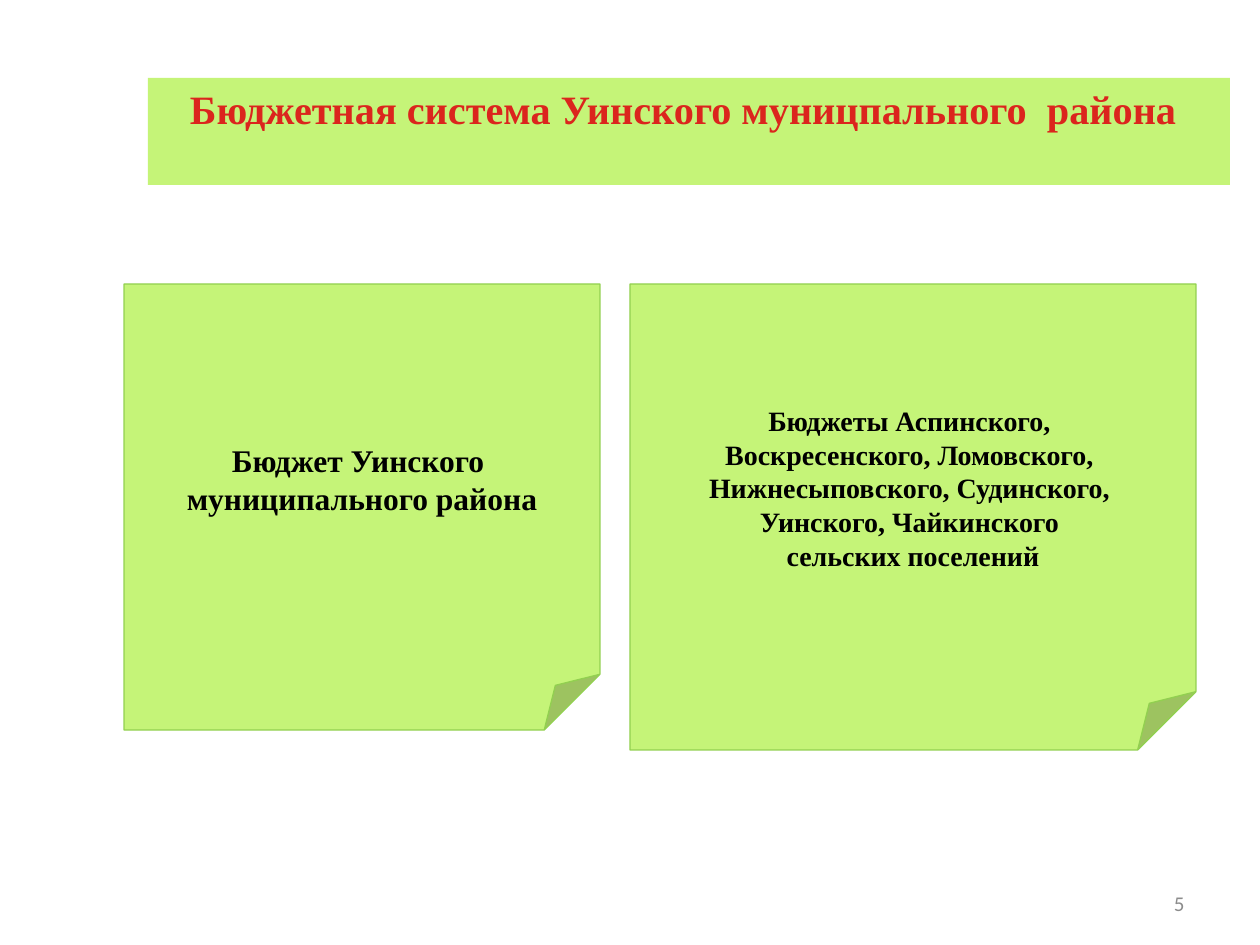
from lxml import etree
from pptx import Presentation
from pptx.dml.color import RGBColor
from pptx.enum.shapes import MSO_SHAPE
from pptx.enum.text import MSO_ANCHOR, PP_ALIGN
from pptx.oxml.ns import qn
from pptx.util import Pt

PX = 914400 // 126
RECT = MSO_SHAPE.RECTANGLE
NOTE = MSO_SHAPE.FOLDED_CORNER
TOP, MID = MSO_ANCHOR.TOP, MSO_ANCHOR.MIDDLE
CENTER, RIGHT = PP_ALIGN.CENTER, PP_ALIGN.RIGHT
SERIF, SANS = "Times New Roman", "Calibri"
COLORS = {"lime": "C5F478", "edge": "92D050", "red": "DB251D",
          "black": "000000", "gray": "8C8C8C"}


def color(name):
    return RGBColor.from_string(COLORS[name])


def scale(box):
    return [side * PX for side in box]


def write(shape, lines, size, tone, font=SERIF, bold=True,
          align=CENTER, anchor=MID, wrap=True):
    frame = shape.text_frame
    frame.word_wrap = wrap
    frame.vertical_anchor = anchor
    frame.text = "\n".join(lines)
    for para in frame.paragraphs:
        para.alignment = align
        for run in para.runs:
            run.font.name = font
            run.font.size = Pt(size)
            run.font.bold = bold
            run.font.color.rgb = color(tone)


def panel(slide, kind, box):
    shape = slide.shapes.add_shape(kind, *scale(box))
    shape.shadow.inherit = False
    shape.fill.solid()
    shape.fill.fore_color.rgb = color("lime")
    return shape


def fold(shape, part):
    geom = shape.element.spPr.find(qn("a:prstGeom"))
    for old in geom.findall(qn("a:avLst")):
        geom.remove(old)
    guides = etree.SubElement(geom, qn("a:avLst"))
    etree.SubElement(guides, qn("a:gd"), name="adj", fmla=f"val {part}")


def title(slide, box, text):
    shape = panel(slide, RECT, box)
    shape.line.fill.background()
    write(shape, [text], 23, "red", anchor=TOP)


def note(slide, box, lines, size):
    shape = panel(slide, NOTE, box)
    fold(shape, 12500)
    shape.line.color.rgb = color("edge")
    shape.line.width = Pt(0.75)
    write(shape, lines, size, "black", wrap=False)


def number(slide, box, text):
    shape = slide.shapes.add_textbox(*scale(box))
    write(shape, [text], 12, "gray", font=SANS, bold=False, align=RIGHT)


def main():
    deck = Presentation()
    deck.slide_width, deck.slide_height = scale((1260, 945))
    slide = deck.slides.add_slide(deck.slide_layouts[6])
    number(slide, (1092, 878, 105, 50), "5")
    note(slide, (124, 284, 476, 446),
         ["Бюджет Уинского ", "муниципального района"], 18)
    note(slide, (630, 284, 566, 466),
         ["Бюджеты Аспинского, ",
          "Воскресенского, Ломовского, ",
          "Нижнесыповского, Судинского, ",
          "Уинского, Чайкинского ",
          "сельских поселений"], 16)
    title(slide, (148, 78, 1082, 107),
          "Бюджетная система Уинского муницпального  района ")
    deck.save("out.pptx")


if __name__ == "__main__":
    main()
